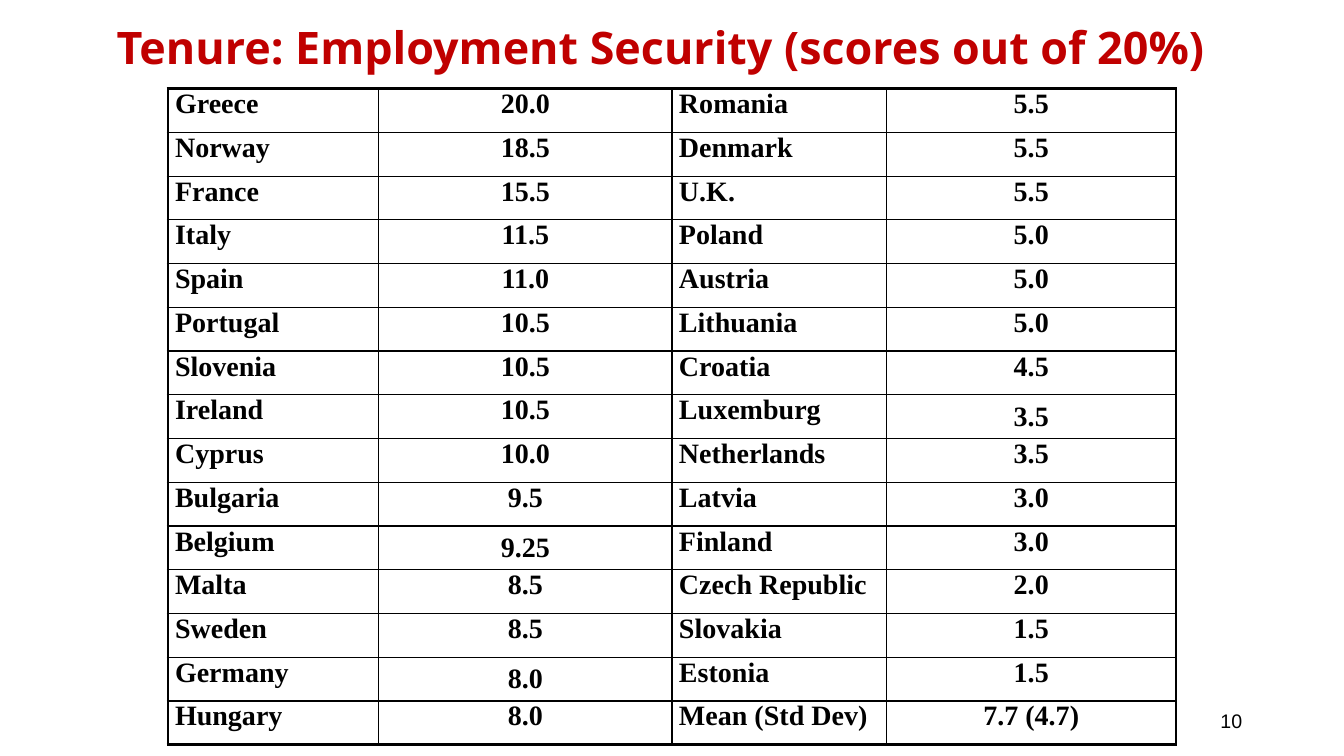
from lxml import etree
from pptx import Presentation
from pptx.dml.color import RGBColor
from pptx.enum.text import MSO_ANCHOR as Anchor, PP_ALIGN as Align
from pptx.oxml.ns import qn
from pptx.util import Inches, Pt

WIDTH, HEIGHT = 13.33, 7.5
BLACK, RED = "000000", "C00000"
THIN, THICK = 1, 2.25
COLUMN_SHARES = (0.209, 0.291, 0.213, 0.287)

SCORES = [
    ("Greece", "20.0", "Romania", "5.5"),
    ("Norway", "18.5", "Denmark", "5.5"),
    ("France", "15.5", "U.K.", "5.5"),
    ("Italy", "11.5", "Poland", "5.0"),
    ("Spain", "11.0", "Austria", "5.0"),
    ("Portugal", "10.5", "Lithuania", "5.0"),
    ("Slovenia", "10.5", "Croatia", "4.5"),
    ("Ireland", "10.5", "Luxemburg", "3.5"),
    ("Cyprus", "10.0", "Netherlands", "3.5"),
    ("Bulgaria", "9.5", "Latvia", "3.0"),
    ("Belgium", "9.25", "Finland", "3.0"),
    ("Malta", "8.5", "Czech Republic", "2.0"),
    ("Sweden", "8.5", "Slovakia", "1.5"),
    ("Germany", "8.0", "Estonia", "1.5"),
    ("Hungary", "8.0", "Mean (Std Dev)", "7.7 (4.7)"),
]
MIDDLE_CELLS = {("Ireland", 3), ("Belgium", 1), ("Germany", 1)}


def color(code):
    return RGBColor.from_string(code)


def write(frame, text, font, size, align=Align.LEFT, fill=BLACK, bold=False):
    """Put one formatted line of text into a text frame."""
    para = frame.paragraphs[0]
    para.alignment = align
    span = para.add_run()
    span.text = text
    span.font.name = font
    span.font.size = Pt(size)
    span.font.bold = bold
    span.font.color.rgb = color(fill)


def set_margins(target, across, down):
    target.margin_left = target.margin_right = Inches(across)
    target.margin_top = target.margin_bottom = Inches(down)


def add_text(page, box, text, anchor=Anchor.TOP, margins=(0.1, 0.05), **style):
    frame = page.shapes.add_textbox(*map(Inches, box)).text_frame
    frame.word_wrap = True
    frame.vertical_anchor = anchor
    set_margins(frame, *margins)
    write(frame, text, **style)


def set_borders(cell, widths):
    """Draw left, right, top and bottom borders, given in points."""
    properties = cell._tc.get_or_add_tcPr()
    for index, (side, width) in enumerate(zip("LRTB", widths)):
        line = etree.Element(qn(f"a:ln{side}"), w=str(Pt(width)))
        solid = etree.SubElement(line, qn("a:solidFill"))
        etree.SubElement(solid, qn("a:srgbClr"), val=BLACK)
        properties.insert(index, line)


def add_score_table(page, box):
    left, top, width, height = box
    rows, columns = len(SCORES), len(COLUMN_SHARES)
    table = page.shapes.add_table(rows, columns, *map(Inches, box)).table
    table.first_row = table.horz_banding = False
    for column, share in zip(table.columns, COLUMN_SHARES):
        column.width = Inches(width * share)
    for r, record in enumerate(SCORES):
        table.rows[r].height = Inches(height / rows)
        for c, text in enumerate(record):
            cell = table.cell(r, c)
            cell.fill.background()
            set_margins(cell, 0.07, 0)
            middle = (record[0], c) in MIDDLE_CELLS
            cell.vertical_anchor = Anchor.MIDDLE if middle else Anchor.TOP
            write(cell.text_frame, text, "Times New Roman", 20, bold=True,
                  align=Align.CENTER if c % 2 else Align.LEFT)
            outer = (c == 0, c == columns - 1, r == 0, r == rows - 1)
            set_borders(cell, [THICK if edge else THIN for edge in outer])


def build_score_slide(page, box):
    left, top, width, height = box
    add_text(page, (left + 0.38, top, width - 0.98, height * 0.125),
             "Tenure: Employment Security (scores out of 20%)", margins=(0.2, 0.2),
             font="Noto Sans", size=32, align=Align.CENTER, fill=RED, bold=True)
    add_score_table(page, (left + width * 0.125, top + 0.88, width * 0.75, 6.51))
    add_text(page, (left + 9.42, top + 6.95, 3, 0.4), "10", anchor=Anchor.MIDDLE,
             font="Arial", size=14, align=Align.RIGHT)


def main():
    deck = Presentation()
    deck.slide_width, deck.slide_height = Inches(WIDTH), Inches(HEIGHT)
    page = deck.slides.add_slide(deck.slide_layouts[6])
    page.background.fill.solid()
    page.background.fill.fore_color.rgb = color("FFFFFF")
    build_score_slide(page, (0, 0, WIDTH, HEIGHT))
    deck.save("out.pptx")


if __name__ == "__main__":
    main()
